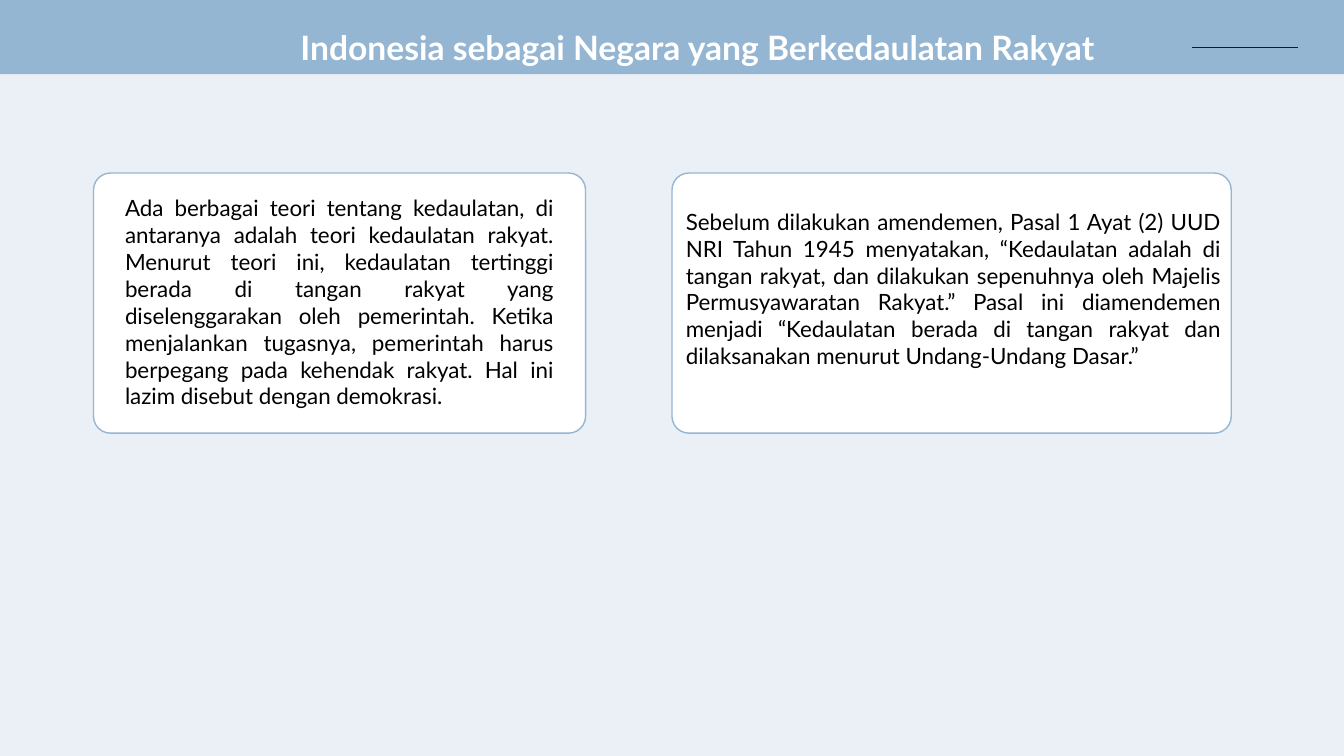
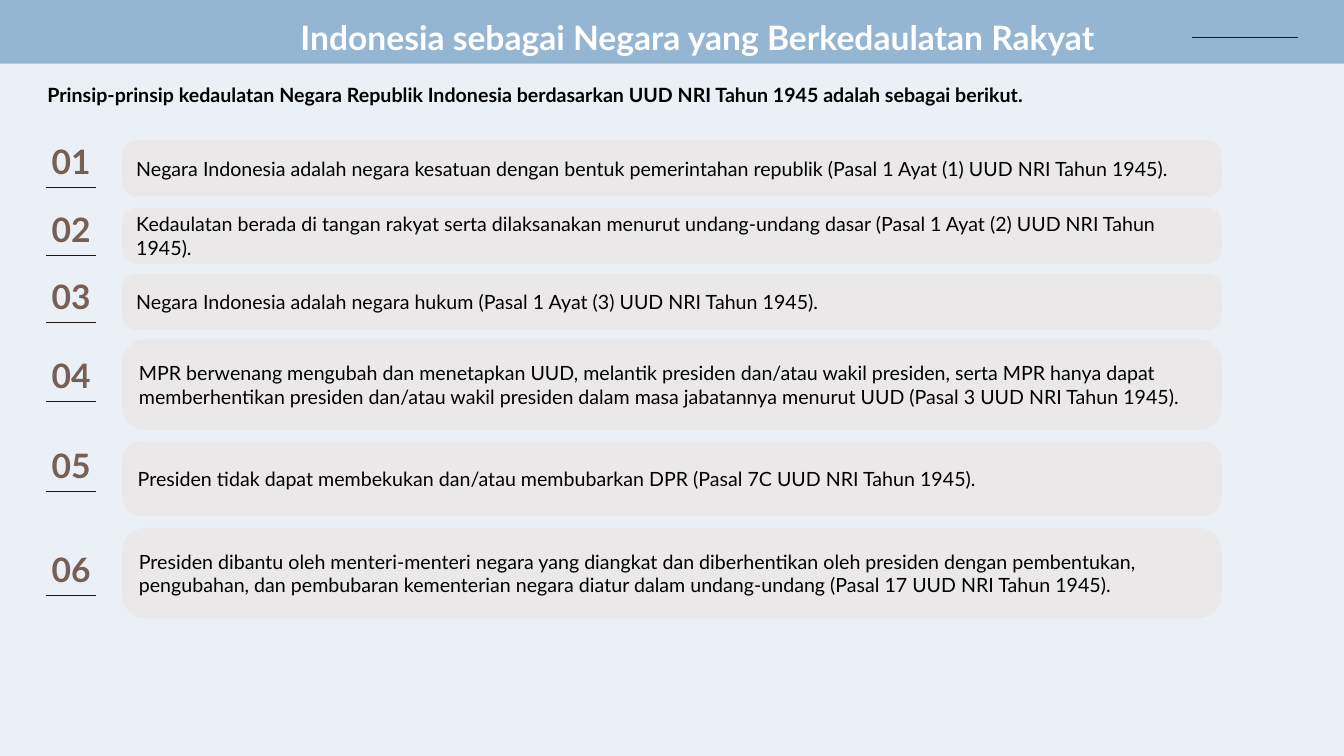
from lxml.etree import SubElement
from pptx import Presentation
from pptx.dml.color import RGBColor
from pptx.enum.shapes import MSO_CONNECTOR, MSO_SHAPE
from pptx.enum.text import MSO_ANCHOR as ANCHOR, PP_ALIGN as ALIGN
from pptx.oxml.ns import qn
from pptx.util import Pt

hex_color = RGBColor.from_string

# Shared colours and text styles
PAPER, BLUE, WHITE, GREY = "EAF0F6", "94B6D2", "FFFFFF", "EAE8E8"
INK, BLACK, BROWN = "20190B", "000000", "775F55"
TITLE = "Indonesia sebagai Negara yang Berkedaulatan Rakyat"
TITLE_FONT = {"size": Pt(24), "bold": True}
THEORY_FONT = {"size": Pt(16), "bold": False}
INTRO_FONT = {"size": Pt(14), "bold": True}
PRINCIPLE_FONT = {"size": Pt(14), "bold": False}
SIDE_MARGINS = {"margin_left": Pt(7.2), "margin_right": Pt(7.2)}
TEXT_FRAME = {"word_wrap": True, "vertical_anchor": ANCHOR.TOP,
              "margin_top": Pt(3.6), "margin_bottom": Pt(3.6), **SIDE_MARGINS}
MIDDLE_FRAME = {"word_wrap": True, "vertical_anchor": ANCHOR.MIDDLE,
                "margin_top": Pt(7.2), "margin_bottom": Pt(7.2), **SIDE_MARGINS}


def add_panel(slide, kind, box, fill, outline=None, radius=None):
    panel = slide.shapes.add_shape(kind, *map(Pt, box))
    panel.shadow.inherit = False
    panel.fill.solid()
    panel.fill.fore_color.rgb = hex_color(fill)
    if outline:
        panel.line.color.rgb = hex_color(outline)
        panel.line.width = Pt(1)
    else:
        panel.line.fill.background()
    if radius:
        panel.adjustments[0] = radius
    return panel


def write(holder, text, color, font_format, frame_format=TEXT_FRAME,
          align=ALIGN.LEFT, spacing=1.0):
    for name, value in frame_format.items():
        setattr(holder.text_frame, name, value)
    paragraph = holder.text_frame.paragraphs[0]
    paragraph.alignment = align
    paragraph.line_spacing = spacing
    run = paragraph.add_run()
    run.text = text
    run.font.name = "Lato"
    run.font.color.rgb = hex_color(color)
    for name, value in font_format.items():
        setattr(run.font, name, value)


prs = Presentation()
prs.slide_width, prs.slide_height = Pt(960), Pt(540)
prs.slide_master.background.fill.solid()
prs.slide_master.background.fill.fore_color.rgb = hex_color(PAPER)
theory, principles = [prs.slides.add_slide(prs.slide_layouts[6]) for _ in range(2)]
rules = []  # slide, left, right, height on the slide

# Title band on both slides
for slide, band_height, title_top in ((theory, 53, 15.8), (principles, 45.5, 8.4)):
    add_panel(slide, MSO_SHAPE.RECTANGLE, (0, 0, 960, band_height), BLUE)
    title = slide.shapes.add_textbox(Pt(207.5), Pt(title_top), Pt(644.5), Pt(36))
    write(title, TITLE, WHITE, TITLE_FONT)
    rules.append((slide, 851.5, 927.5, title_top + 18.4))

# Slide 1: theory and amendment side by side
statements = [
    # card left and width, then text box
    (66.8, 351.5, (82.2, 135.4, 320.5, 162.7),
     "Ada berbagai teori tentang kedaulatan, di antaranya adalah teori kedaulatan rakyat. "
     "Menurut teori ini, kedaulatan tertinggi berada di tangan rakyat yang diselenggarakan "
     "oleh pemerintah. Ketika menjalankan tugasnya, pemerintah harus berpegang pada "
     "kehendak rakyat. Hal ini lazim disebut dengan demokrasi."),
    (480, 399.5, (482.8, 145, 396.5, 143.3),
     "Sebelum dilakukan amendemen, Pasal 1 Ayat (2) UUD NRI Tahun 1945 menyatakan, "
     "“Kedaulatan adalah di tangan rakyat, dan dilakukan sepenuhnya oleh Majelis "
     "Permusyawaratan Rakyat.” Pasal ini diamendemen menjadi “Kedaulatan berada di tangan "
     "rakyat dan dilaksanakan menurut Undang-Undang Dasar.”"),
]
for left, width, text_box, text in statements:
    add_panel(theory, MSO_SHAPE.ROUNDED_RECTANGLE, (left, 123.6, width, 185.8),
              WHITE, BLUE, 0.065)
    statement = theory.shapes.add_textbox(*map(Pt, text_box))
    write(statement, text, BLACK, THEORY_FONT, align=ALIGN.JUSTIFY)

# Slide 2: introduction
intro = principles.shapes.add_textbox(Pt(26.8), Pt(55.5), Pt(775), Pt(24.2))
write(intro, "Prinsip-prinsip kedaulatan Negara Republik Indonesia berdasarkan UUD NRI "
      "Tahun 1945 adalah sebagai berikut.", BLACK, INTRO_FONT)

# Slide 2: numbered principles
articles = [
    # card top and height, number top, text
    (100.3, 40, 84.2,
     "Negara Indonesia adalah negara kesatuan dengan bentuk pemerintahan republik "
     "(Pasal 1 Ayat (1) UUD NRI Tahun 1945)."),
    (148.4, 40, 132.6,
     "Kedaulatan berada di tangan rakyat serta dilaksanakan menurut undang-undang dasar "
     "(Pasal 1 Ayat (2) UUD NRI Tahun 1945)."),
    (195.6, 40, 180.6,
     "Negara Indonesia adalah negara hukum (Pasal 1 Ayat (3) UUD NRI Tahun 1945)."),
    (242.4, 64.6, 237,
     "MPR berwenang mengubah dan menetapkan UUD, melantik presiden dan/atau wakil "
     "presiden, serta MPR hanya dapat memberhentikan presiden dan/atau wakil presiden "
     "dalam masa jabatannya menurut UUD (Pasal 3 UUD NRI Tahun 1945)."),
    (315, 53.4, 301.2,
     "Presiden tidak dapat membekukan dan/atau membubarkan DPR "
     "(Pasal 7C UUD NRI Tahun 1945)."),
    (377, 64.6, 375.4,
     "Presiden dibantu oleh menteri-menteri negara yang diangkat dan diberhentikan oleh "
     "presiden dengan pembentukan, pengubahan, dan pembubaran kementerian negara diatur "
     "dalam undang-undang (Pasal 17 UUD NRI Tahun 1945)."),
]
for order, (top, height, number_top, text) in enumerate(articles, start=1):
    card = add_panel(principles, MSO_SHAPE.ROUNDED_RECTANGLE,
                     (87.2, top, 785.5, height), GREY, radius=0.261)
    write(card, text, BLACK, PRINCIPLE_FONT, MIDDLE_FRAME)
    number = principles.shapes.add_textbox(0, Pt(number_top), Pt(101.5), Pt(66))
    write(number, f"{order:02}", BROWN, TITLE_FONT, MIDDLE_FRAME, ALIGN.CENTER, 0.9)
    rules.append((principles, 33, 68.5, number_top + 50))

# Thin rules beside the titles and under the numbers
for slide, left, right, y in rules:
    rule = slide.shapes.add_connector(MSO_CONNECTOR.STRAIGHT,
                                      Pt(left), Pt(y), Pt(right), Pt(y))
    rule.line.color.rgb = hex_color(INK)
    rule.line.width = Pt(0.75)
    SubElement(rule.element.spPr, qn("a:effectLst"))

prs.save("out.pptx")
